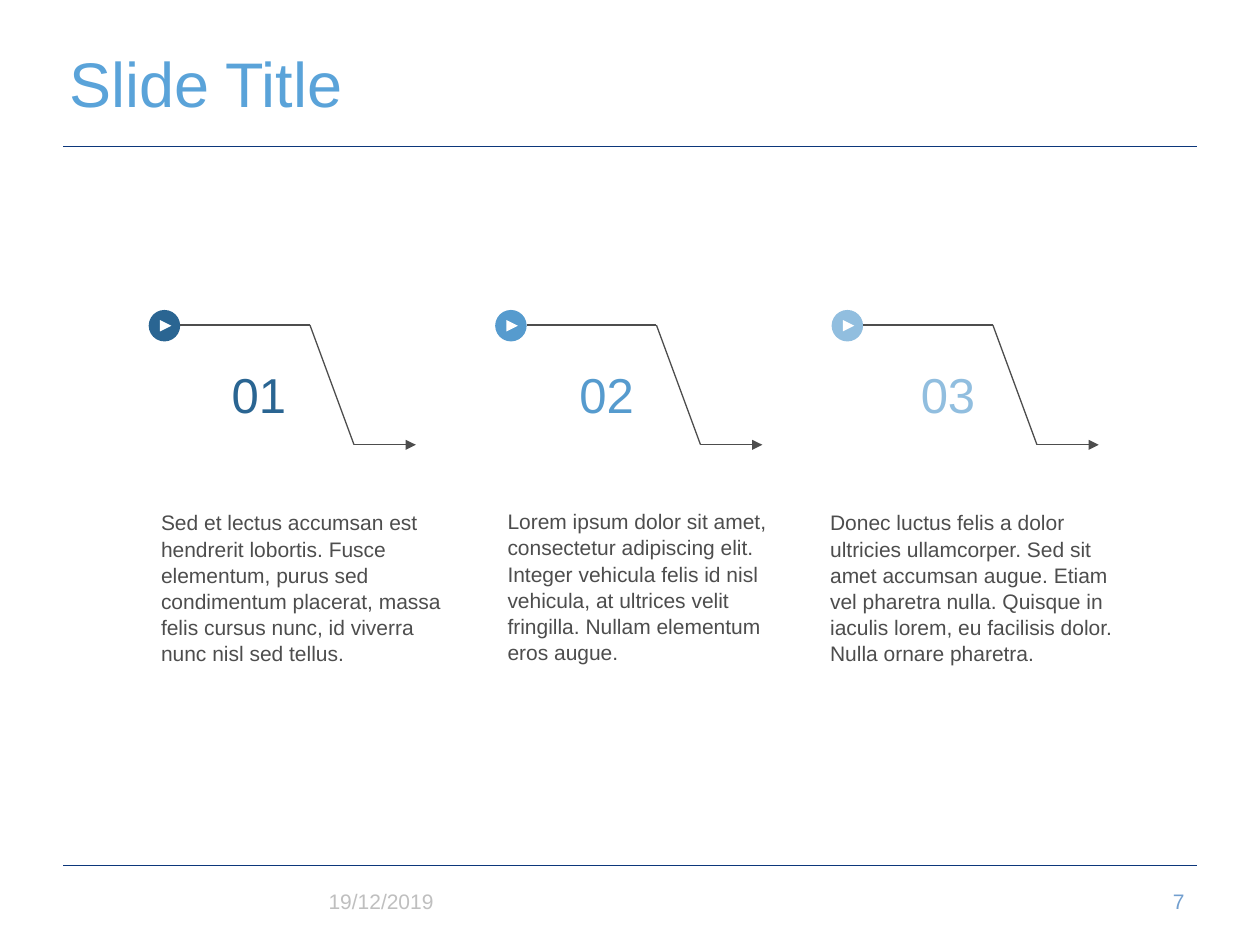
"""Build a three-step process slide with stepped arrows."""
from lxml.etree import SubElement
from pptx import Presentation
from pptx.dml.color import RGBColor
from pptx.enum.shapes import MSO_CONNECTOR, MSO_SHAPE
from pptx.enum.text import MSO_ANCHOR, PP_ALIGN
from pptx.oxml.ns import qn
from pptx.util import Inches, Pt

COLOURS = {
    "title": "5AA3D9", "rule": "0C377B", "ink": "4D4D4D", "white": "FFFFFF",
    "dark": "2A6592", "medium": "569BCE", "light": "91BEDF",
    "date": "BFBFBF", "number": "729FCF",
}
STEPS = [
    ("01", "dark", 1.18, 1.74, 1.18, 3.99,
     "Sed et lectus accumsan est hendrerit lobortis. Fusce elementum, purus sed "
     "condimentum placerat, massa felis cursus nunc, id viverra nunc nisl sed tellus."),
    ("02", "medium", 3.93, 4.5, 3.93, 3.98,
     "Lorem ipsum dolor sit amet, consectetur adipiscing elit. Integer vehicula felis "
     "id nisl vehicula, at ultrices velit fringilla. Nullam elementum eros augue."),
    ("03", "light", 6.6, 7.21, 6.49, 3.99,
     "Donec luctus felis a dolor ultricies ullamcorper. Sed sit amet accumsan augue. "
     "Etiam vel pharetra nulla. Quisque in iaculis lorem, eu facilisis dolor. "
     "Nulla ornare pharetra."),
]


class SlideBuilder:
    def __init__(self, page, font="Arial"):
        self.page = page
        self.font = font

    def colour(self, name):
        return RGBColor.from_string(COLOURS[name])

    def add_span(self, frame, text, size, colour, align=PP_ALIGN.LEFT, spacing=None):
        paragraph = frame.paragraphs[0]
        paragraph.alignment = align
        if spacing:
            paragraph.line_spacing = spacing
        span = paragraph.add_run()
        span.text = text
        span.font.name = self.font
        span.font.size = Pt(size)
        span.font.color.rgb = self.colour(colour)

    def title(self, text):
        box = self.page.shapes.title
        box.left, box.top = Inches(0.5), Inches(0.26)
        box.width, box.height = Inches(9), Inches(0.78)
        frame = box.text_frame
        frame.margin_left = frame.margin_right = Inches(0.05)
        frame.margin_top = frame.margin_bottom = Inches(0.05)
        frame.vertical_anchor = MSO_ANCHOR.MIDDLE
        self.add_span(frame, text, 36, "title")

    def text(self, text, left, top, width, height, size, colour,
             anchor=MSO_ANCHOR.TOP, **style):
        box = self.page.shapes.add_textbox(
            Inches(left), Inches(top), Inches(width), Inches(height))
        frame = box.text_frame
        frame.word_wrap = True
        frame.vertical_anchor = anchor
        self.add_span(frame, text, size, colour, **style)

    def line(self, start, end, colour="ink", width=0.75):
        connector = self.page.shapes.add_connector(
            MSO_CONNECTOR.STRAIGHT, *(Inches(value) for value in (*start, *end)))
        connector.line.color.rgb = self.colour(colour)
        connector.line.width = Pt(width)
        SubElement(connector._element.spPr, qn("a:effectLst"))

    def shape(self, kind, left, top, size, colour, rotation=0):
        shape = self.page.shapes.add_shape(
            kind, Inches(left), Inches(top), Inches(size), Inches(size))
        shape.shadow.inherit = False
        shape.fill.solid()
        shape.fill.fore_color.rgb = self.colour(colour)
        shape.line.fill.background()
        shape.rotation = rotation

    def stepped_arrow(self, left, colour):
        triangle = MSO_SHAPE.ISOSCELES_TRIANGLE
        self.shape(MSO_SHAPE.OVAL, left, 2.46, 0.25, colour)
        self.shape(triangle, left + 0.09, 2.54, 0.09, "white", 90)
        points = [(left + 0.25, 2.58), (left + 1.28, 2.58),
                  (left + 1.63, 3.53), (left + 2.04, 3.53)]
        for start, end in zip(points, points[1:]):
            self.line(start, end)
        self.shape(triangle, left + 2.04, 3.49, 0.08, "ink", 90)

    def step(self, number, colour, left, number_left, text_left, text_top, text):
        self.stepped_arrow(left, colour)
        self.text(number, number_left, 2.84, 1.23, 0.91, 28, colour)
        self.text(text, text_left, text_top, 2.56, 1.31, 12, "ink", spacing=1.04)


def main():
    deck = Presentation()
    deck.slide_width, deck.slide_height = Inches(10), Inches(7.5)
    builder = SlideBuilder(deck.slides.add_slide(deck.slide_layouts[5]))
    for height in (6.87, 1.16):
        builder.line((0.5, height), (9.5, height), "rule", 0.5)
    builder.title("Slide Title")
    for step in STEPS:
        builder.step(*step)
    builder.text("19/12/2019", 2.51, 6.95, 1.5, 0.4, 12, "date", MSO_ANCHOR.MIDDLE)
    builder.text("7", 8.7, 6.95, 0.8, 0.4, 12, "number", MSO_ANCHOR.MIDDLE,
                 align=PP_ALIGN.RIGHT)
    deck.save("out.pptx")


if __name__ == "__main__":
    main()
